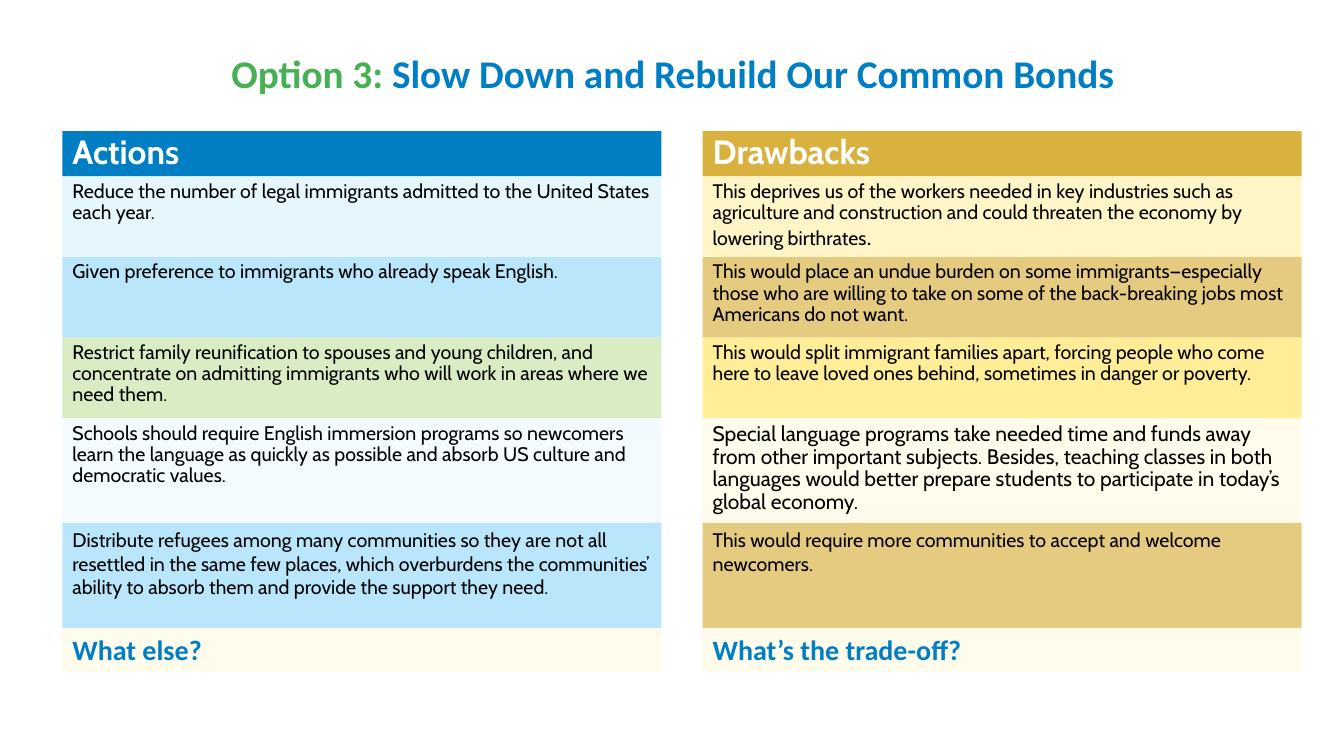
from pptx import Presentation
from pptx.dml.color import RGBColor
from pptx.enum.shapes import MSO_SHAPE
from pptx.enum.text import MSO_ANCHOR, PP_ALIGN
from pptx.util import Inches, Pt

RECT = MSO_SHAPE.RECTANGLE
TOP, MIDDLE, BOTTOM = MSO_ANCHOR.TOP, MSO_ANCHOR.MIDDLE, MSO_ANCHOR.BOTTOM
LEFT, CENTER = PP_ALIGN.LEFT, PP_ALIGN.CENTER

COLORS = {
    "blue": "007EC4", "green": "46B053", "gold": "D8B13F",
    "white": "FFFFFF", "black": "000000",
    "ice": "E6F6FD", "sky": "B9E6FB", "lime": "DAECC3", "frost": "F4FBFF",
    "cream": "FFF5C6", "sand": "E5CB7F", "lemon": "FFED97", "ivory": "FFFCEC",
}

# Row heights: header, five points, closing question
HEIGHTS = [0.45, 0.8, 0.8, 0.8, 1.04, 1.04, 0.44]
START, WIDTH = 1.3, 5.94

# Each column: left edge, then (fill, text) from top to bottom
COLUMNS = [
    (0.62, [
        ("blue", "Actions"),
        ("ice", "Reduce the number of legal immigrants admitted to the United States each year."),
        ("sky", "Given preference to immigrants who already speak English."),
        ("lime", "Restrict family reunification to spouses and young children, and "
                 "concentrate on admitting immigrants who will work in areas where we need them."),
        ("frost", "Schools should require English immersion programs so newcomers learn the "
                  "language as quickly as possible and absorb US culture and democratic values."),
        ("sky", "Distribute refugees among many communities so they are not all resettled in the "
                "same few places, which overburdens the communities’ ability to absorb them and "
                "provide the support they need."),
        ("ivory", "What else?"),
    ]),
    (6.97, [
        ("gold", "Drawbacks"),
        ("cream", "This deprives us of the workers needed in key industries such as agriculture "
                  "and construction and could threaten the economy by lowering birthrates"),
        ("sand", "This would place an undue burden on some immigrants—especially those who are "
                 "willing to take on some of the back-breaking jobs most Americans do not want."),
        ("lemon", "This would split immigrant families apart, forcing people who come here to "
                  "leave loved ones behind, sometimes in danger or poverty."),
        ("ivory", "Special language programs take needed time and funds away from other important "
                  "subjects. Besides, teaching classes in both languages would better prepare "
                  "students to participate in today’s global economy."),
        ("sand", "This would require more communities to accept and welcome newcomers."),
        ("ivory", "What’s the trade-off?"),
    ]),
]


class Deck:
    def __init__(self):
        self.show = Presentation()
        self.show.slide_width, self.show.slide_height = Inches(13.33), Inches(7.5)
        self.slide = self.show.slides.add_slide(self.show.slide_layouts[6])

    def color(self, name):
        return RGBColor.from_string(COLORS[name])

    def label(self, shape, text, size, face="Cabin", color="black", bold=False,
              anchor=TOP, align=LEFT, space=0.9):
        frame = shape.text_frame
        frame.word_wrap = True
        frame.vertical_anchor = anchor
        para = frame.paragraphs[0]
        para.alignment, para.line_spacing = align, space
        font = para.font
        font.name, font.size, font.bold = face, Pt(size), bold
        font.color.rgb = self.color(color)
        para.add_run().text = text
        return para

    def title(self, box, lead, rest):
        shape = self.slide.shapes.add_textbox(*map(Inches, box))
        para = self.label(shape, lead, 28, "Calibri", "blue", True, MIDDLE, CENTER)
        para.runs[0].font.color.rgb = self.color("green")
        para.add_run().text = rest

    def cell(self, box, fill, text, size, **style):
        shape = self.slide.shapes.add_shape(RECT, *map(Inches, box))
        shape.shadow.inherit = False
        shape.fill.solid()
        shape.fill.fore_color.rgb = self.color(fill)
        shape.line.fill.background()
        return self.label(shape, text, size, **style)


def main():
    deck = Deck()

    # Title
    deck.title((0.92, 0.4, 11.5, 0.7), "Option 3: ", "Slow Down and Rebuild Our Common Bonds")

    # Styles by row
    point = {"size": 14}
    loose = {"size": 14, "space": 1.0}
    head = {"size": 24, "color": "white", "bold": True, "anchor": BOTTOM}
    ask = {"size": 20, "face": "Calibri", "color": "blue", "bold": True, "space": 1.0}
    styles = [head, point, point, point, point, loose, ask]

    # Two columns of stacked cells
    paras = []
    for left, cells in COLUMNS:
        for row, (fill, text) in enumerate(cells):
            top = START + sum(HEIGHTS[:row])
            box = (left, top, WIDTH, HEIGHTS[row])
            paras.append(deck.cell(box, fill, text, **styles[row]))

    # Larger full stop and larger language text among the drawbacks
    rights = paras[len(HEIGHTS):]
    stop = rights[1].add_run()
    stop.text = "."
    stop.font.size = Pt(18)
    rights[4].font.size = Pt(15)

    deck.show.save("out.pptx")


if __name__ == "__main__":
    main()
